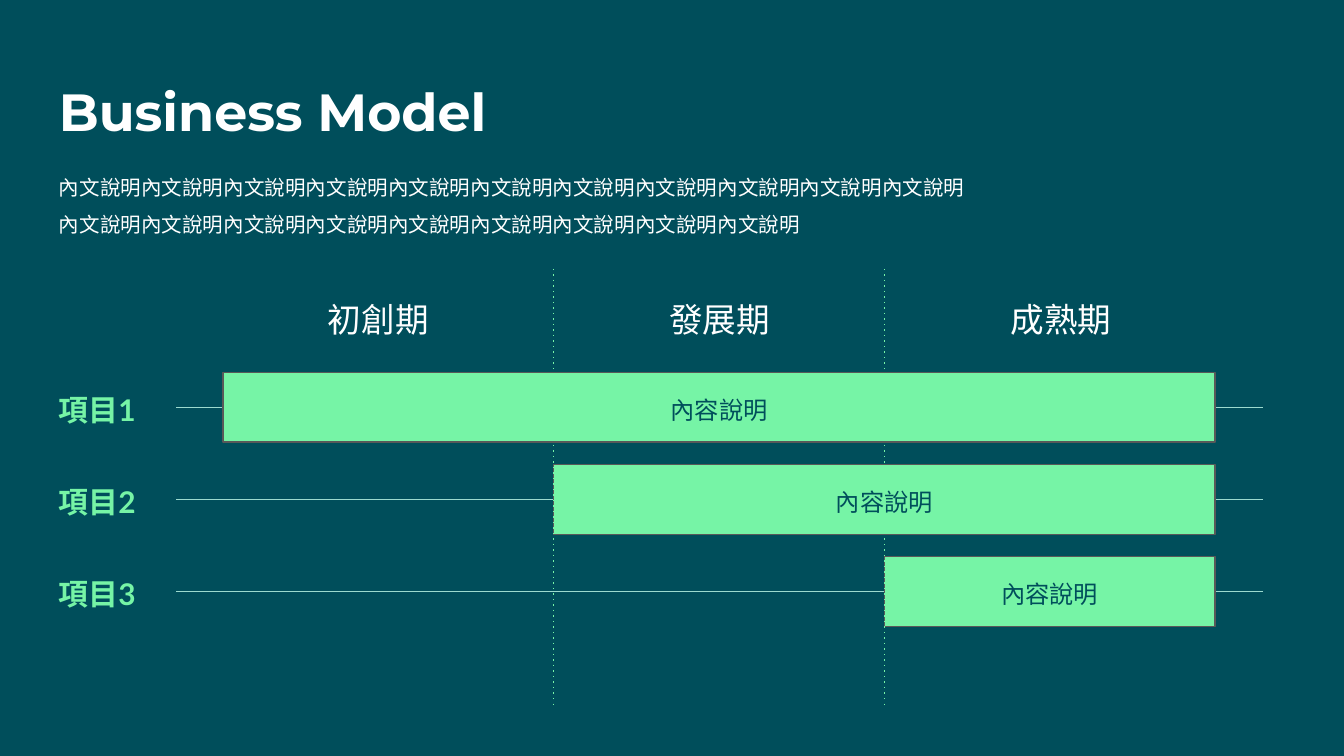
import pptx
import pptx.dml.color
import pptx.enum.dml
import pptx.enum.shapes
import pptx.enum.text
import pptx.oxml
import pptx.oxml.ns
import pptx.util
from pptx.util import Inches

BACKGROUND, WHITE, GREEN = "004E5B", "FFFFFF", "76F4A6"
TRACK, OUTLINE = "9CDACF", "595959"
LEFT = pptx.enum.text.PP_ALIGN.LEFT
CENTER = pptx.enum.text.PP_ALIGN.CENTER
TOP = pptx.enum.text.MSO_ANCHOR.TOP
MIDDLE = pptx.enum.text.MSO_ANCHOR.MIDDLE


def color(value):
    return pptx.dml.color.RGBColor.from_string(value)


def add_text(slide, left, top, width, height, text, size, ink, font="Lato",
             bold=False, align=LEFT, anchor=TOP, spacing=1.15):
    box = slide.shapes.add_textbox(
        Inches(left), Inches(top), Inches(width), Inches(height))
    frame = box.text_frame
    frame.word_wrap = True
    frame.vertical_anchor = anchor
    frame.margin_left = frame.margin_right = Inches(0.1)
    frame.margin_top = frame.margin_bottom = Inches(0.1)
    frame.text = text
    paragraph = frame.paragraphs[0]
    paragraph.alignment = align
    paragraph.line_spacing = spacing
    for run in paragraph.runs:
        run.font.name = font
        run.font.size = pptx.util.Pt(size)
        run.font.bold = bold
        run.font.color.rgb = color(ink)


def add_line(slide, x1, y1, x2, y2, ink, dotted=False):
    line = slide.shapes.add_connector(
        pptx.enum.shapes.MSO_CONNECTOR.STRAIGHT,
        Inches(x1), Inches(y1), Inches(x2), Inches(y2))
    line.line.color.rgb = color(ink)
    line.line.width = pptx.util.Pt(0.75)
    properties = line._element.spPr
    if dotted:
        # The wide "dot" pattern has no member in MSO_LINE
        line.line.dash_style = pptx.enum.dml.MSO_LINE.ROUND_DOT
        dash = properties.find(".//" + pptx.oxml.ns.qn("a:prstDash"))
        dash.set("val", "dot")
    properties.append(pptx.oxml.parse_xml(
        '<a:effectLst xmlns:a='
        '"http://schemas.openxmlformats.org/drawingml/2006/main"/>'))


def add_bar(slide, left, top, width, height, text):
    bar = slide.shapes.add_shape(
        pptx.enum.shapes.MSO_SHAPE.RECTANGLE,
        Inches(left), Inches(top), Inches(width), Inches(height))
    bar.shadow.inherit = False
    bar.fill.solid()
    bar.fill.fore_color.rgb = color(GREEN)
    bar.line.color.rgb = color(OUTLINE)
    bar.line.width = pptx.util.Pt(0.75)

    # Caption centred on the bar
    text_width, text_height = min(2.79, width - 0.33), 0.34
    add_text(slide, left + (width - text_width) / 2,
             top + (height - text_height) / 2, text_width, text_height,
             text, 13, BACKGROUND, align=CENTER, anchor=MIDDLE)


def add_heading(slide, left, top, title):
    add_text(slide, left, top, 3.52, 0.63, title, 28, WHITE,
             font="Montserrat", bold=True, spacing=1)


def add_description(slide, left, top, description):
    add_text(slide, left, top, 7.02, 0.72, description, 11, WHITE,
             spacing=1.5)


def add_timeline(slide, left, top, width, height, phases, items, bar_text):
    label_width, label_height = 0.97, 0.34
    bar_height, row_pitch = 0.52, 1.37 / 2
    phase_left, phase_width = left + 1.32, 2.46
    bars_right = phase_left + phase_width * len(phases)

    # Phase names
    for index, phase in enumerate(phases):
        add_text(slide, left + 1.69 + 2.54 * index, top + 0.08, 1.57, 0.56,
                 phase, 18, WHITE, align=CENTER)

    # One row per item, each starting one phase later
    for index, item in enumerate(items):
        middle = top + 1.03 + row_pitch * index
        add_text(slide, left, middle - label_height / 2, label_width,
                 label_height, item, 16, GREEN, bold=True, anchor=MIDDLE)
        add_line(slide, left + label_width, middle, left + width, middle,
                 TRACK)
        start = phase_left + phase_width * index
        add_bar(slide, start, middle - bar_height / 2, bars_right - start,
                bar_height, bar_text)

    # Dividers between phases
    for index in range(1, len(phases)):
        x = phase_left + phase_width * index
        add_line(slide, x, top, x, top + height, GREEN, dotted=True)


def main():
    presentation = pptx.Presentation()
    presentation.slide_width = Inches(10)
    presentation.slide_height = Inches(10) * 9 // 16
    slide = presentation.slides.add_slide(presentation.slide_layouts[6])
    slide.background.fill.solid()
    slide.background.fill.fore_color.rgb = color(BACKGROUND)

    add_heading(slide, 0.34, 0.49, "Business Model")
    add_timeline(slide, 0.34, 2, 9.06, 3.25,
                 ["初創期", "發展期", "成熟期"],
                 ["項目1", "項目2", "項目3"], "內容說明")
    add_description(slide, 0.34, 1.11, "內文說明" * 20)
    presentation.save("out.pptx")


if __name__ == "__main__":
    main()
